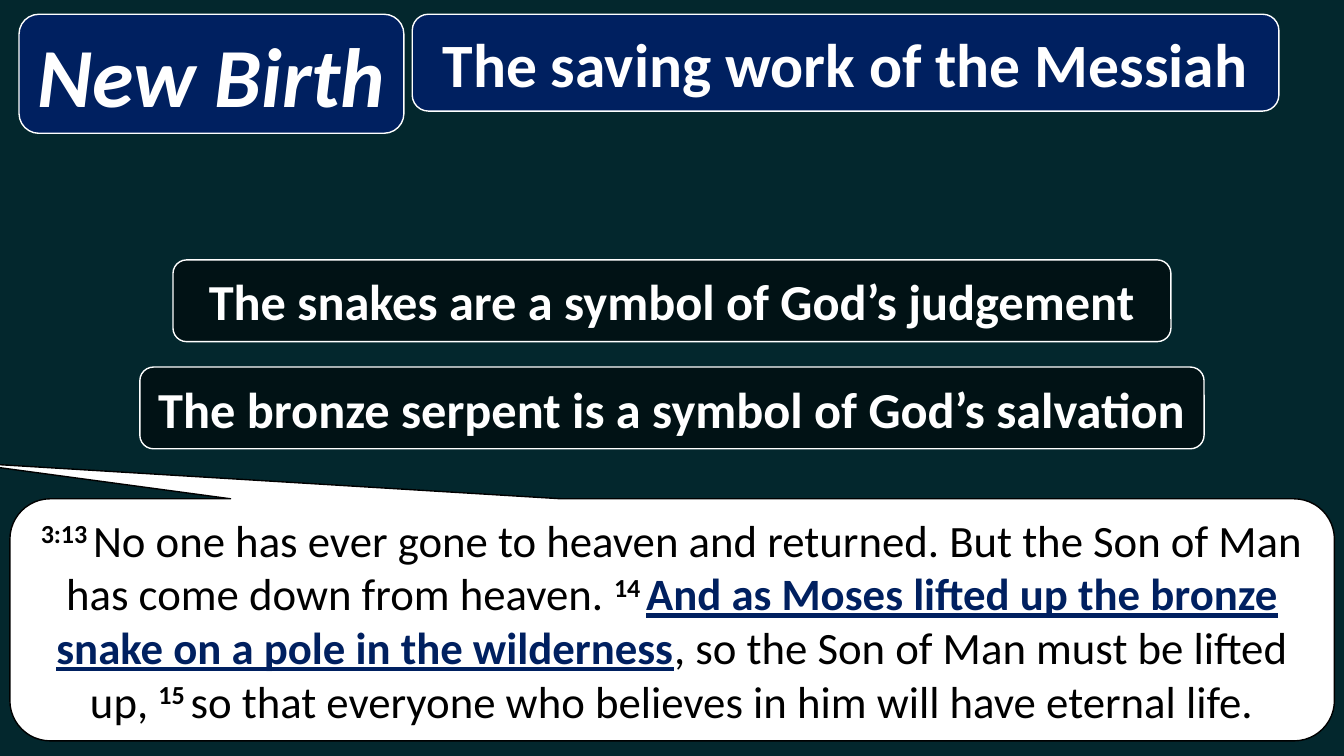
from pptx import Presentation
from pptx.dml.color import RGBColor as Rgb
from pptx.enum.shapes import MSO_SHAPE as Shape
from pptx.enum.text import MSO_ANCHOR as Anchor, PP_ALIGN as Align
from pptx.oxml.ns import qn
from pptx.util import Cm, Pt
from lxml.etree import SubElement as Sub

HUES = {"back": "03272D", "navy": "002060", "white": "FFFFFF", "black": "000000"}
WIDE, HIGH = 33.87, 19.05
SIGNS = [
    ("The snakes are a symbol of God’s judgement", 25.15),
    ("The bronze serpent is a symbol of God’s salvation", 26.82),
]
MARK = {"bold": True, "base": 30}
VERSE = [
    ("3:13 ", MARK),
    ("No one has ever gone to heaven and returned. But the Son of Man "
     "has come down from heaven. ", {}),
    ("14 ", MARK),
    ("And as Moses lifted up the bronze snake on a pole in the wilderness",
     {"bold": True, "line": True, "hue": "navy"}),
    (", so the Son of Man must be lifted up, ", {}),
    ("15 ", MARK),
    ("so that everyone who believes in him will have eternal life.", {}),
]


def tint(name):
    """Return the named colour."""
    return Rgb.from_string(HUES[name])


def write(para, text, size=32, hue="black", bold=False, slant=False, line=False, base=0):
    """Add a formatted run to a paragraph."""
    run = para.add_run()
    run.text = text
    font = run.font
    font.name, font.size = "Calibri", Pt(size)
    font.bold, font.italic, font.underline = bold, slant, line
    font.color.rgb = tint(hue)
    if base:
        run._r.get_or_add_rPr().set("baseline", str(base * 1000))


def panel(slide, box, kind=Shape.ROUNDED_RECTANGLE, fill="navy", edge="white",
          alpha=100, wrap=False):
    """Draw a filled panel and return it with its centred paragraph."""
    shape = slide.shapes.add_shape(kind, *map(Cm, box))
    shape.shadow.inherit = False
    shape.fill.solid()
    shape.fill.fore_color.rgb = tint(fill)
    if alpha < 100:
        color = shape._element.spPr.find(qn("a:solidFill"))[0]
        Sub(color, qn("a:alpha")).set("val", str(alpha * 1000))
    shape.line.color.rgb = tint(edge)
    shape.line.width = Pt(1)
    frame = shape.text_frame
    frame.word_wrap = wrap
    frame.vertical_anchor = Anchor.MIDDLE
    para = frame.paragraphs[0]
    para.alignment = Align.CENTER
    return shape, para


def header(slide, left, top):
    """Place the topic and the title side by side."""
    _, para = panel(slide, (left, top, 9.7, 3))
    write(para, "New Birth", size=60, hue="white", bold=True, slant=True)
    _, para = panel(slide, (left + 9.91, top, 21.84, 2.44))
    write(para, "The saving work of the Messiah", size=44, hue="white", bold=True)


def signs(slide, top, step):
    """Stack the symbol panels, centred on the slide."""
    for row, (text, width) in enumerate(SIGNS):
        box = ((WIDE - width) / 2, top + row * step, width, 2.06)
        _, para = panel(slide, box, fill="black", alpha=52)
        write(para, text, size=36, hue="white", bold=True)


def quote(slide, box):
    """Place the verse in a speech callout."""
    shape, para = panel(slide, box, kind=Shape.ROUNDED_RECTANGULAR_CALLOUT,
                        fill="white", edge="black", wrap=True)
    for spot, value in enumerate((-0.538, -0.651, 0.167)):
        shape.adjustments[spot] = value
    for text, form in VERSE:
        write(para, text, **form)


def main():
    """Build and save the slide."""
    deck = Presentation()
    deck.slide_width, deck.slide_height = Cm(WIDE), Cm(HIGH)
    slide = deck.slides.add_slide(deck.slide_layouts[6])
    back = slide.background.fill
    back.solid()
    back.fore_color.rgb = tint("back")
    header(slide, 0.48, 0.36)
    signs(slide, 6.55, 2.7)
    quote(slide, (0.25, 12.57, 33.38, 6.1))
    deck.save("out.pptx")


if __name__ == "__main__":
    main()
